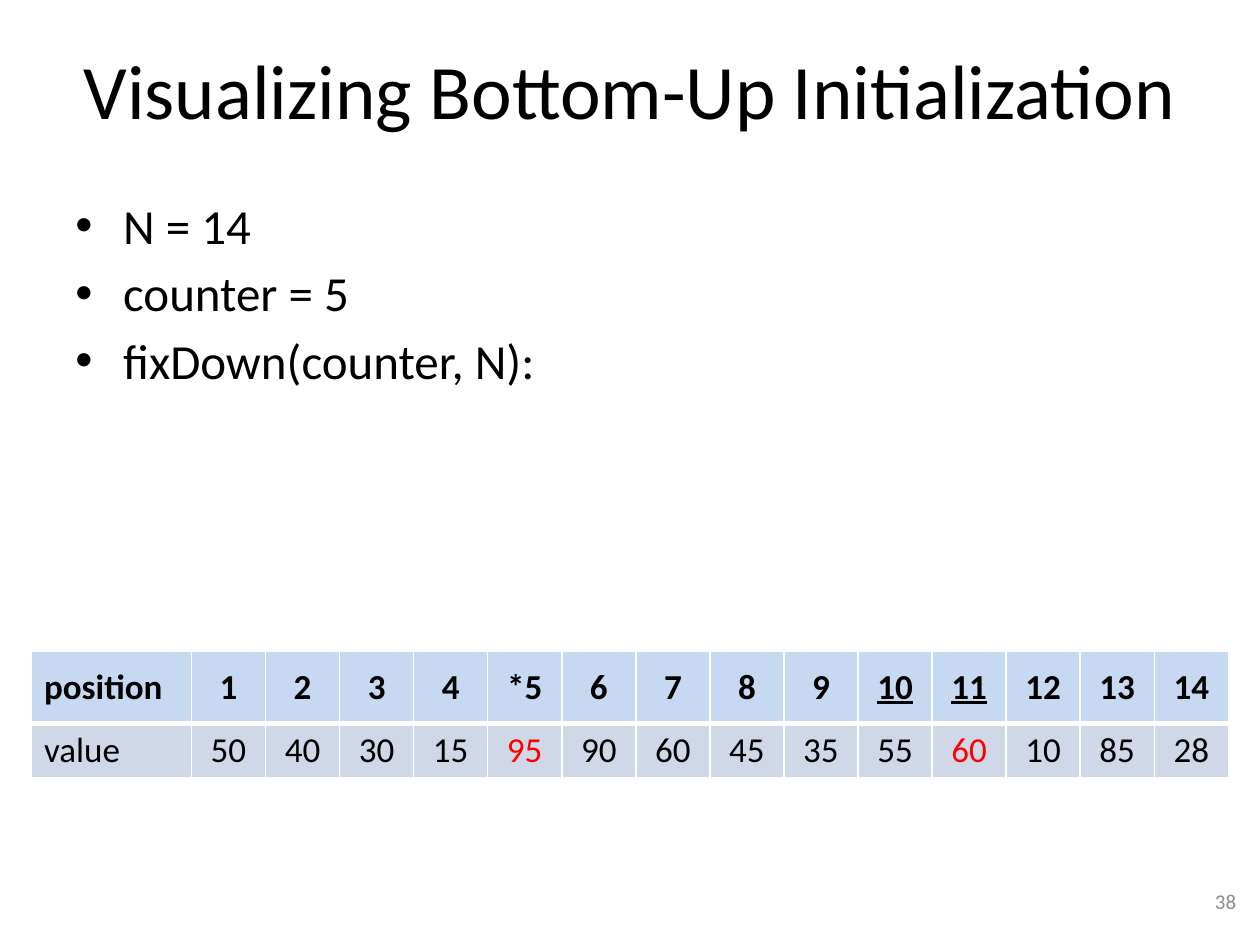
from pptx import Presentation
from pptx.dml.color import RGBColor
from pptx.enum.text import MSO_ANCHOR, PP_ALIGN
from pptx.oxml.ns import qn
from pptx.util import Inches, Pt
from lxml.etree import SubElement

# Content
TITLE = "Visualizing Bottom-Up Initialization"
BULLETS = ["N = 14", "counter = 5", "fixDown(counter, N):"]
PAGE_NUMBER = "38"
POSITIONS = ["position", "1", "2", "3", "4", "*5", "6", "7", "8", "9",
             "10", "11", "12", "13", "14"]
VALUES = ["value", "50", "40", "30", "15", "95", "90", "60", "45", "35",
          "55", "60", "10", "85", "28"]
CHILD_COLUMNS = {10, 11}    # underlined positions
SWAPPED_COLUMNS = {5, 11}   # red values

THEME = {
    "font": "Calibri",
    "text": "000000", "muted": "8C8C8C", "accent": "FF0000",
    "header": "C6D9F1", "body": "D0D8E8", "border": "FFFFFF",
    "title_size": 44, "bullet_size": 28, "table_size": 20, "number_size": 12,
}

# Layout, in inches
TITLE_BOX = (0.5, 0.08, 9, 1.25)
BULLET_BOX = (0.5, 1.5, 9, 2.58)
NUMBER_BOX = (7.58, 6.95, 2.33, 0.4)
TABLE_BOX = (0.25, 5.17, 9.5, 0.98)
LABEL_WIDTH = 1.27
ROW_HEIGHTS = (0.57, 0.41)
BULLET_INDENT = 0.38


def write(paragraph, text, size, color="text", align=PP_ALIGN.LEFT, **font_format):
    paragraph.alignment = align
    run = paragraph.add_run()
    run.text = text
    run.font.color.rgb = RGBColor.from_string(THEME[color])
    font_values = {"name": THEME["font"], "size": Pt(THEME[size]), **font_format}
    for name, value in font_values.items():
        setattr(run.font, name, value)


def add_text_frame(slide, box, anchor=MSO_ANCHOR.MIDDLE):
    frame = slide.shapes.add_textbox(*map(Inches, box)).text_frame
    frame.word_wrap = True
    frame.vertical_anchor = anchor
    return frame


def add_bullet(paragraph):
    paragraph.space_before = Pt(5)
    properties = paragraph._p.get_or_add_pPr()
    properties.set("marL", str(Inches(BULLET_INDENT)))
    properties.set("indent", str(-Inches(BULLET_INDENT)))
    SubElement(properties, qn("a:buFont"), typeface="Arial")
    SubElement(properties, qn("a:buChar"), char="•")


def set_borders(cell, widths):
    properties = cell._tc.get_or_add_tcPr()
    for index, (side, width) in enumerate(widths.items()):
        line = SubElement(properties, qn(f"a:{side}"), w=str(Pt(width)))
        fill = SubElement(line, qn("a:solidFill"))
        SubElement(fill, qn("a:srgbClr"), val=THEME["border"])
        properties.remove(line)
        properties.insert(index, line)  # borders come before the fill


def add_heap_table(slide):
    rows = (POSITIONS, VALUES)
    table = slide.shapes.add_table(
        len(rows), len(POSITIONS), *map(Inches, TABLE_BOX)).table
    value_width = (TABLE_BOX[2] - LABEL_WIDTH) / (len(POSITIONS) - 1)
    for index, column in enumerate(table.columns):
        column.width = Inches(value_width if index else LABEL_WIDTH)

    for row_index, texts in enumerate(rows):
        is_header = row_index == 0
        table.rows[row_index].height = Inches(ROW_HEIGHTS[row_index])
        for column_index, text in enumerate(texts):
            cell = table.cell(row_index, column_index)
            cell.vertical_anchor = MSO_ANCHOR.MIDDLE
            cell.fill.solid()
            cell.fill.fore_color.rgb = RGBColor.from_string(
                THEME["header" if is_header else "body"])
            set_borders(cell, {"lnL": 1, "lnR": 1,
                               "lnT": 1 if is_header else 3,
                               "lnB": 3 if is_header else 1})
            swapped = not is_header and column_index in SWAPPED_COLUMNS
            write(cell.text_frame.paragraphs[0], text, "table_size",
                  color="accent" if swapped else "text",
                  align=PP_ALIGN.CENTER if column_index else PP_ALIGN.LEFT,
                  bold=is_header,
                  underline=is_header and column_index in CHILD_COLUMNS)


def main():
    presentation = Presentation()
    presentation.slide_width = Inches(10)
    presentation.slide_height = Inches(7.5)
    slide = presentation.slides.add_slide(presentation.slide_layouts[6])

    # Title
    title = add_text_frame(slide, TITLE_BOX)
    write(title.paragraphs[0], TITLE, "title_size", align=PP_ALIGN.CENTER)

    # Bullets
    bullets = add_text_frame(slide, BULLET_BOX, MSO_ANCHOR.TOP)
    for index, text in enumerate(BULLETS):
        paragraph = bullets.add_paragraph() if index else bullets.paragraphs[0]
        add_bullet(paragraph)
        write(paragraph, text, "bullet_size")

    # Page number
    number = add_text_frame(slide, NUMBER_BOX)
    write(number.paragraphs[0], PAGE_NUMBER, "number_size", "muted", PP_ALIGN.RIGHT)

    # Heap array
    add_heap_table(slide)

    presentation.save("out.pptx")


if __name__ == "__main__":
    main()
